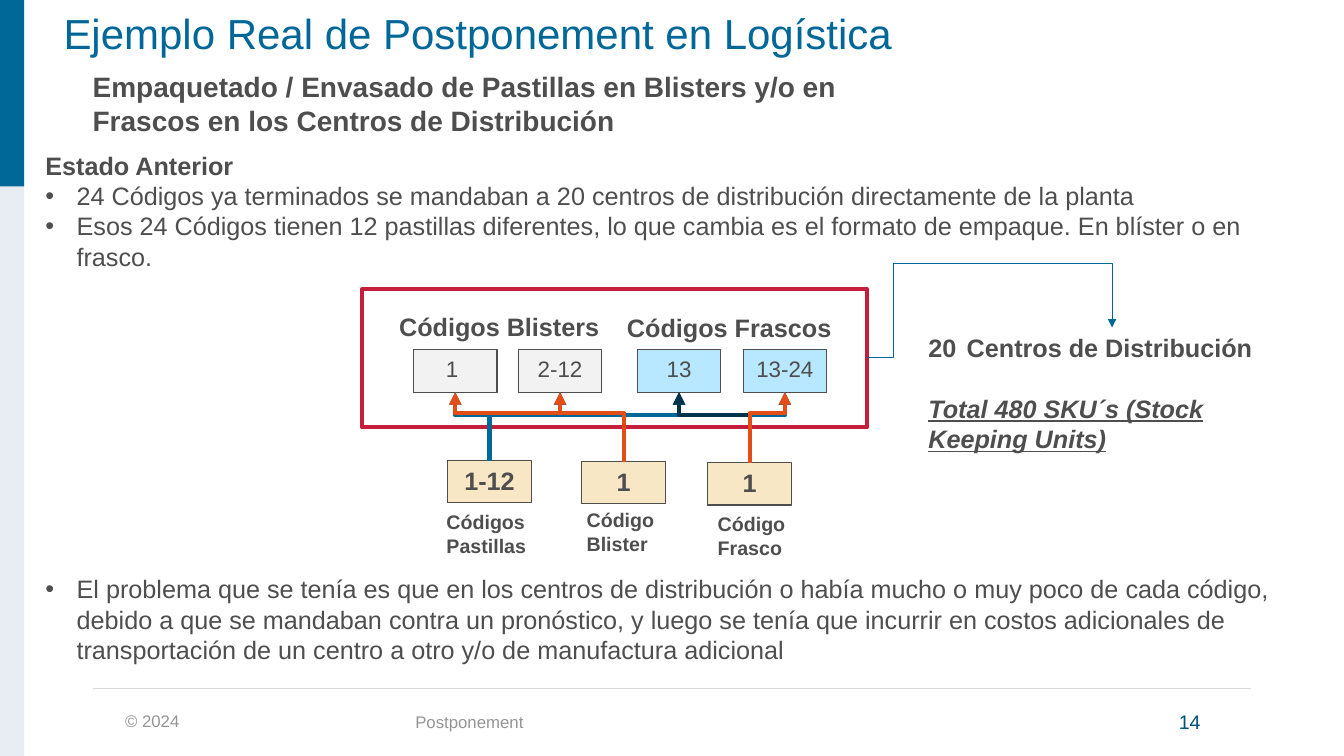
from lxml.etree import SubElement
from pptx import Presentation
from pptx.dml.color import RGBColor
from pptx.enum.shapes import MSO_CONNECTOR as Link, MSO_SHAPE as Shape
from pptx.enum.text import MSO_ANCHOR as Anchor, MSO_AUTO_SIZE as AutoSize, PP_ALIGN as Align
from pptx.oxml.ns import qn
from pptx.util import Inches, Pt

COLORS = {
    "text": "4E4E4E", "blue": "006799", "navy": "00344C", "orange": "E54D17",
    "red": "C41E3A", "number": "00527A", "footer": "959595", "rule": "D9D9D9",
    "rail": "E7EDF2", "gray": "F2F2F2", "sky": "B8E8FF", "cream": "F7E7C4",
}
LINE_HEIGHT = 1.2


def rgb(name):
    return RGBColor.from_string(COLORS[name])


class SlideBuilder:
    font = "Arial"

    def __init__(self, slide):
        self.slide = slide
        self.shapes = slide.shapes

    def style(self, paragraph, size, color="text", bold=False, align=Align.LEFT,
              before=0, bullet=None, indent=0, start=None):
        """Format a paragraph; start turns the bullet into a number."""
        props = paragraph._p.get_or_add_pPr()
        props.set("marL", str(Inches(indent)))
        props.set("indent", str(-Inches(indent)))
        if start:
            SubElement(props, qn("a:buAutoNum"), type="arabicPlain", startAt=str(start))
        elif bullet:
            SubElement(props, qn("a:buFont"), typeface=self.font)
            SubElement(props, qn("a:buChar"), char=bullet)
        else:
            SubElement(props, qn("a:buNone"))
        paragraph.alignment = align
        paragraph.line_spacing = Pt(size * LINE_HEIGHT)
        paragraph.space_before = Pt(before)
        font = paragraph.font
        font.name, font.size, font.bold = self.font, Pt(size), bold
        font.color.rgb = rgb(color)

    def fill_frame(self, frame, items, anchor=Anchor.TOP, wrap=True):
        """Write (text, style options) pairs, one paragraph each."""
        frame.word_wrap = wrap
        frame.auto_size = AutoSize.NONE
        frame.vertical_anchor = anchor
        for index, (text, options) in enumerate(items):
            paragraph = frame.add_paragraph() if index else frame.paragraphs[0]
            paragraph.text = text
            self.style(paragraph, **options)
        return frame

    def placeholder(self, index, box, items, anchor=Anchor.TOP):
        holder = self.slide.placeholders[index]
        holder.left, holder.top, holder.width, holder.height = map(Inches, box)
        return self.fill_frame(holder.text_frame, items, anchor)

    def text(self, box, items, **layout):
        area = self.shapes.add_textbox(*map(Inches, box))
        return self.fill_frame(area.text_frame, items, **layout)

    def rectangle(self, box, fill=None, line=None, width=0.75, items=()):
        area = self.shapes.add_shape(Shape.RECTANGLE, *map(Inches, box))
        area.shadow.inherit = False
        if fill:
            area.fill.solid()
            area.fill.fore_color.rgb = rgb(fill)
        else:
            area.fill.background()
        if line:
            area.line.color.rgb = rgb(line)
            area.line.width = Pt(width)
        else:
            area.line.fill.background()
        self.fill_frame(area.text_frame, items)

    def connector(self, kind, ends, color, width, arrow=False):
        link = self.shapes.add_connector(kind, *map(Inches, ends))
        link.line.color.rgb = rgb(color)
        link.line.width = Pt(width)
        if arrow:
            SubElement(link.line._get_or_add_ln(), qn("a:tailEnd"), type="triangle")
        SubElement(link._element.spPr, qn("a:effectLst"))
        return link

    def set_bends(self, link, *bends):
        """Place the bends as fractions of the connector's box."""
        geometry = link._element.spPr.find(qn("a:prstGeom"))
        geometry.set("prst", f"bentConnector{len(bends) + 2}")
        guides = geometry.find(qn("a:avLst"))
        if guides is None:
            guides = SubElement(geometry, qn("a:avLst"))
        for number, bend in enumerate(bends, 1):
            SubElement(guides, qn("a:gd"), name=f"adj{number}",
                       fmla=f"val {round(bend * 100000)}")

    def rising_arrow(self, x1, y1, x2, y2, turn, color):
        """Go up to the height turn, across, then up to the end."""
        rise, run = y1 - y2, x2 - x1
        x, y = (x1 + x2) / 2, (y1 + y2) / 2
        # The connector is laid out sideways, then turned to point upwards.
        ends = (x - rise / 2, y - run / 2, x + rise / 2, y + run / 2)
        link = self.connector(Link.ELBOW, ends, color, 3, arrow=True)
        link._element.spPr.find(qn("a:xfrm")).set("rot", str(270 * 60000))
        self.set_bends(link, (y1 - turn) / rise)


def add_diagram(page):
    box_width, box_height = 0.83, 0.42
    label = dict(size=14, bold=True)
    heading = dict(size=18, bold=True)
    product_top = 3.47
    products = [("1 ", 4.1, "gray"), ("2-12", 5.14, "gray"),
                ("13", 6.32, "sky"), ("13-24", 7.37, "sky")]
    supplies = [("1-12", 4.44, 4.57, "Códigos Pastillas", (4.33, 5.01)),
                ("1", 5.77, 4.58, "Código Blister", (5.72, 4.99)),
                ("1", 7.02, 4.59, "Código Frasco", (7.02, 5.03))]

    for code, left, fill in products:
        page.rectangle((left, product_top, box_width, box_height), fill, "text",
                       items=[(code, dict(size=16, align=Align.CENTER))])
    for code, left, top, name, corner in supplies:
        page.text((*corner, 1.04, 0.57), [(name, label)])
        page.rectangle((left, top, box_width, box_height), "cream", "text",
                       items=[(code, dict(heading, align=Align.CENTER))])
    page.text((3.86, 3.04, 2.21, 0.4), [("Códigos Blisters", heading)], wrap=False)
    page.text((6.12, 3.05, 2.25, 0.4), [("Códigos Frascos", heading)], wrap=False)
    page.rectangle((3.59, 2.87, 5.01, 1.37), line="red", width=3)

    centers = page.text((9.11, 3.25, 3.83, 1.31), [
        ("Centros de Distribución", dict(heading, indent=0.38, start=20)),
        ("Total 480 SKU´s (Stock Keeping Units)", dict(heading, before=21.6))])
    total = centers.paragraphs[1].font
    total.italic = total.underline = True
    to_centers = page.connector(Link.ELBOW, (8.6, 3.55, 11.03, 3.25), "blue", 0.5, arrow=True)
    page.set_bends(to_centers, 0.106, 3.139)

    flows = [(0, 0, "blue"), (0, 1, "blue"), (0, 2, "blue"), (0, 3, "blue"),
             (1, 0, "orange"), (1, 1, "orange"), (2, 2, "navy"), (2, 3, "orange")]
    for supply, product, color in flows:
        _, supply_left, supply_top, _, _ = supplies[supply]
        product_left = products[product][1]
        page.rising_arrow(supply_left + box_width / 2, supply_top,
                          product_left + box_width / 2, product_top + box_height,
                          4.1 if color == "orange" else 4.12, color)


def main():
    deck = Presentation()
    deck.slide_width, deck.slide_height = Inches(13.33), Inches(7.5)
    page = SlideBuilder(deck.slides.add_slide(deck.slide_layouts[1]))

    page.connector(Link.STRAIGHT, (0.92, 6.83, 12.41, 6.83), "rule", 0.5)
    page.rectangle((0, 0, 0.24, 7.5), "rail")
    page.rectangle((0, 0, 0.24, 1.85), "blue")

    title = page.placeholder(0, (0.53, -0.37, 11.5, 1.45), [
        ("Ejemplo Real de Postponement en Logística", dict(size=30, color="blue"))],
        Anchor.MIDDLE)
    title.paragraphs[0].line_spacing = 0.9
    page.text((0.82, 0.64, 8.12, 0.77), [
        ("Empaquetado / Envasado de Pastillas en Blisters y/o en Frascos en los "
         "Centros de Distribución", dict(size=20, bold=True))])

    point = dict(size=18, bullet="•", indent=0.31)
    page.placeholder(1, (0.35, 1.44, 12.83, 5.55), [
        ("Estado Anterior", dict(size=18, bold=True)),
        ("24 Códigos ya terminados se mandaban a 20 centros de distribución "
         "directamente de la planta", point),
        ("Esos 24 Códigos tienen 12 pastillas diferentes, lo que cambia es el formato "
         "de empaque. En blíster o en frasco.", point),
        ("El problema que se tenía es que en los centros de distribución o había mucho "
         "o muy poco de cada código, debido a que se mandaban contra un pronóstico, y "
         "luego se tenía que incurrir en costos adicionales de transportación de un "
         "centro a otro y/o de manufactura adicional", dict(point, before=216))])

    add_diagram(page)

    footer = dict(size=12, color="footer")
    page.text((0.92, 6.94, 1.18, 0.43), [("© 2024", dict(footer, align=Align.CENTER))],
              anchor=Anchor.MIDDLE, wrap=False)
    page.text((4.02, 6.96, 6.69, 0.4), [("Postponement", footer)], anchor=Anchor.MIDDLE)
    page.text((11.21, 6.96, 1.18, 0.4),
              [("14", dict(size=14, color="number", align=Align.CENTER))],
              anchor=Anchor.MIDDLE)
    deck.save("out.pptx")


if __name__ == "__main__":
    main()
